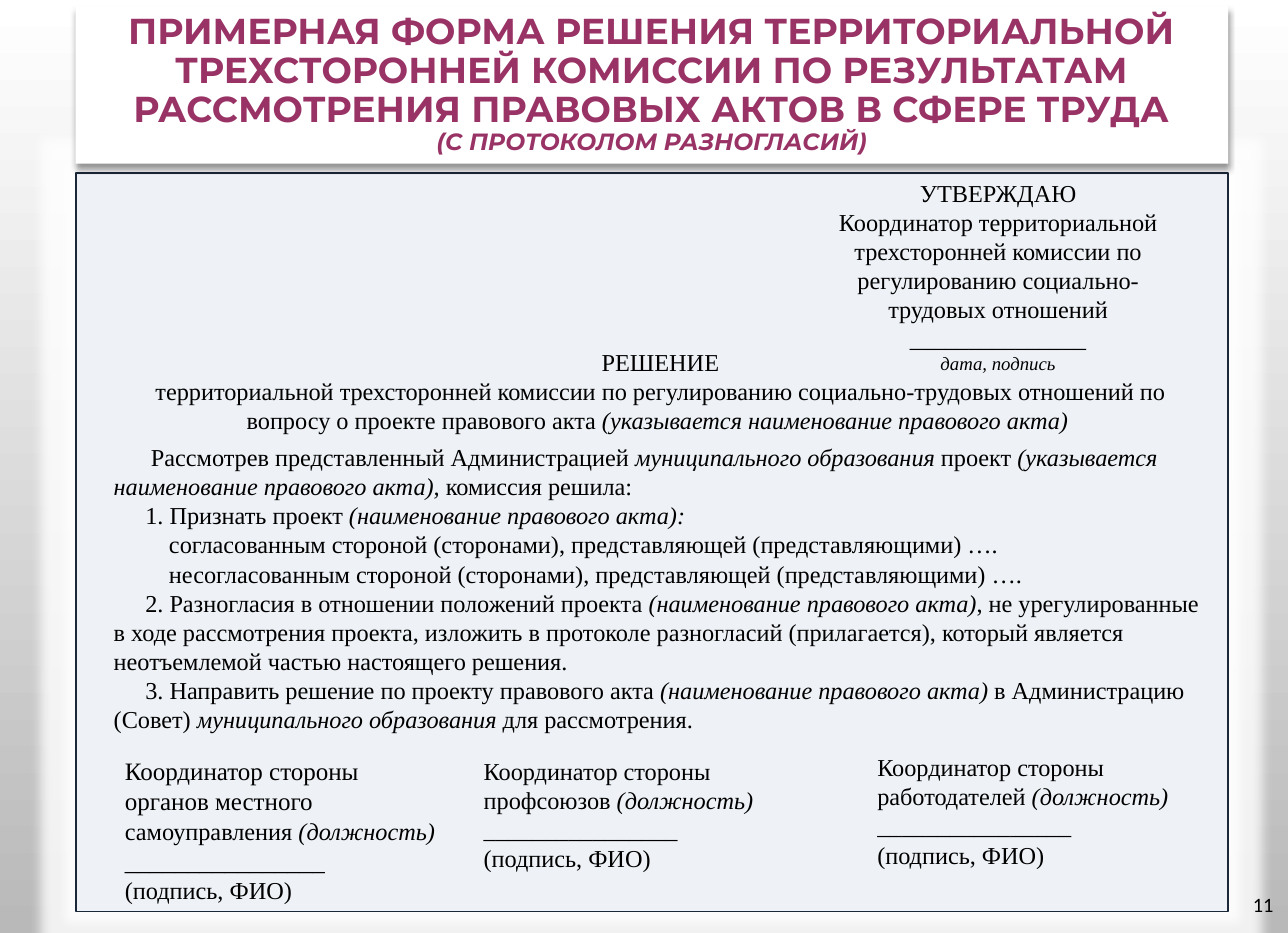
from dataclasses import dataclass

from lxml import etree
from pptx import Presentation
from pptx.dml.color import RGBColor
from pptx.enum.shapes import MSO_SHAPE
from pptx.enum.text import MSO_ANCHOR, MSO_AUTO_SIZE, PP_ALIGN
from pptx.oxml.ns import qn
from pptx.util import Inches, Pt

LEFT, CENTER, RIGHT = PP_ALIGN.LEFT, PP_ALIGN.CENTER, PP_ALIGN.RIGHT
TOP, MIDDLE = MSO_ANCHOR.TOP, MSO_ANCHOR.MIDDLE
RECTANGLE = MSO_SHAPE.RECTANGLE
NO_AUTOFIT = MSO_AUTO_SIZE.NONE

COLORS = {
    "white": "FFFFFF", "background_end": "B9B9B9", "panel": "EEF2F7",
    "panel_line": "1A2839", "heading": "993366", "text": "000000",
}
SERIF, HEADING_FONT, NUMBER_FONT = "Times New Roman", "Montserrat", "Calibri"
BODY_SIZE = 15.5
ITEM_INDENT, SUBITEM_INDENT = 0.28, 0.49


@dataclass
class Run:
    text: str
    italic: bool = False
    size: float = BODY_SIZE
    font: str = SERIF
    bold: bool = False
    color: str = "text"


@dataclass
class Paragraph:
    runs: list[Run]
    indent: float = 0


@dataclass
class Block:
    left: float
    top: float
    width: float
    height: float
    paragraphs: list[Paragraph]
    align: int = LEFT
    anchor: int = TOP
    insets: tuple[float, float] = (0.1, 0.05)


def rgb(name: str) -> RGBColor:
    return RGBColor.from_string(COLORS[name])


def line(text: str, italic: bool = False, size: float = BODY_SIZE) -> Paragraph:
    return Paragraph([Run(text, italic, size)])


def add_run(paragraph, part: Run) -> None:
    run = paragraph.add_run()
    run.text = part.text
    font = run.font
    font.name, font.size = part.font, Pt(part.size)
    font.bold, font.italic = part.bold, part.italic
    font.color.rgb = rgb(part.color)


def set_frame(frame, anchor: int, insets: tuple[float, float]) -> None:
    frame.word_wrap = True
    frame.auto_size = NO_AUTOFIT
    frame.vertical_anchor = anchor
    frame.margin_left = frame.margin_right = Inches(insets[0])
    frame.margin_top = frame.margin_bottom = Inches(insets[1])


def draw_block(slide, block: Block) -> None:
    box = slide.shapes.add_textbox(Inches(block.left), Inches(block.top),
                                   Inches(block.width), Inches(block.height))
    frame = box.text_frame
    set_frame(frame, block.anchor, block.insets)
    for index, content in enumerate(block.paragraphs):
        paragraph = frame.add_paragraph() if index else frame.paragraphs[0]
        paragraph.alignment = block.align
        if content.indent:
            paragraph._p.get_or_add_pPr().set("indent", str(Inches(content.indent)))
        for part in content.runs:
            add_run(paragraph, part)


def add_effect(shape, tag: str, color: str, alpha: int, **attributes: int) -> None:
    shape.shadow.inherit = False
    effects = shape._element.spPr.find(qn("a:effectLst"))
    effect = etree.SubElement(effects, qn(tag), {k: str(v) for k, v in attributes.items()})
    tint = etree.SubElement(effect, qn("a:srgbClr"), val=COLORS[color])
    etree.SubElement(tint, qn("a:alpha"), val=str(alpha * 1000))


def signature(left: float, top: float, width: float, height: float,
              party: list[Paragraph], rule_size: float = BODY_SIZE) -> Block:
    return Block(left, top, width, height,
                 [*party, line("________________", size=rule_size), line("(подпись, ФИО)")])


def coordinator(left: float, top: float, party: str) -> Block:
    return signature(left, top, 2.88, 1.18, [
        line("Координатор стороны"),
        Paragraph([Run(party), Run("(должность)", True)]),
    ])


APPROVAL = Block(7.13, 1.53, 3.44, 1.87, [
    line("УТВЕРЖДАЮ"),
    line("Координатор территориальной"),
    line("трехсторонней комиссии по регулированию социально-трудовых отношений"),
    line("_______________", size=15),
    line("дата, подпись", True, 12),
], CENTER)

DECISION = Block(1.25, 3.03, 9.21, 0.88, [
    line("РЕШЕНИЕ"),
    Paragraph([
        Run("территориальной трехсторонней комиссии по регулированию "
            "социально-трудовых отношений по вопросу о проекте правового акта "),
        Run("(указывается наименование правового акта) ", True),
    ]),
], CENTER)

RESOLUTION = Block(0.91, 3.87, 9.89, 2.79, [
    Paragraph([
        Run("Рассмотрев представленный Администрацией "),
        Run("муниципального образования ", True),
        Run("проект "),
        Run("(указывается наименование правового акта), ", True),
        Run("комиссия решила:"),
    ], 0.33),
    Paragraph([Run("1. Признать проект "),
               Run("(наименование правового акта):", True)], ITEM_INDENT),
    *(Paragraph([Run(f"{verdict} стороной (сторонами), представляющей "
                     "(представляющими) ….")], SUBITEM_INDENT)
      for verdict in ("согласованным", "несогласованным")),
    Paragraph([
        Run("2. Разногласия в отношении положений проекта "),
        Run("(наименование правового акта)", True),
        Run(", не урегулированные в ходе рассмотрения проекта, изложить в протоколе "
            "разногласий (прилагается), который является неотъемлемой частью "
            "настоящего решения."),
    ], ITEM_INDENT),
    Paragraph([
        Run("3. Направить решение по проекту правового акта "),
        Run("(наименование правового акта) ", True),
        Run("в Администрацию (Совет) "),
        Run("муниципального образования ", True),
        Run("для рассмотрения."),
    ], ITEM_INDENT),
])

SIGNATURES = [
    signature(1.01, 6.65, 3.04, 1.43, [Paragraph([
        Run("Координатор стороны органов местного ", size=16),
        Run("самоуправления "), Run("(должность)", True),
    ])], 16),
    coordinator(4.19, 6.65, "профсоюзов "),
    coordinator(7.68, 6.62, "работодателей "),
]

PAGE_NUMBER = Block(10.7, 7.8, 0.72, 0.44,
                    [Paragraph([Run("11", size=13, font=NUMBER_FONT)])],
                    RIGHT, MIDDLE, (0.13, 0.06))


def draw_background(slide) -> None:
    fill = slide.background.fill
    fill.gradient()
    fill.gradient_angle = 270
    for stop, color in zip(fill.gradient_stops, ("white", "background_end")):
        stop.color.rgb = rgb(color)


def draw_panel(slide) -> None:
    panel = slide.shapes.add_shape(RECTANGLE, Inches(0.67), Inches(1.53),
                                   Inches(10.22), Inches(6.55))
    panel.fill.solid()
    panel.fill.fore_color.rgb = rgb("panel")
    panel.line.color.rgb = rgb("panel_line")
    panel.line.width = Pt(1.25)
    add_effect(panel, "a:glow", "white", 80, rad=Inches(0.2))


def draw_title(slide) -> None:
    title = slide.shapes.title
    title.left, title.top = Inches(0.67), Inches(0.05)
    title.width, title.height = Inches(10.22), Inches(1.4)
    title.fill.solid()
    title.fill.fore_color.rgb = rgb("white")
    add_effect(title, "a:outerShdw", "text", 40, blurRad=Pt(4), dist=Pt(3), dir=5400000)
    set_frame(title.text_frame, MIDDLE, (0.13, 0.06))
    heading = title.text_frame.paragraphs[0]
    heading.alignment, heading.line_spacing = CENTER, 0.9
    add_run(heading, Run("ПРИМЕРНАЯ ФОРМА РЕШЕНИЯ ТЕРРИТОРИАЛЬНОЙ ТРЕХСТОРОННЕЙ КОМИССИИ "
                         "ПО РЕЗУЛЬТАТАМ РАССМОТРЕНИЯ ПРАВОВЫХ АКТОВ В СФЕРЕ ТРУДА",
                         False, 23, HEADING_FONT, True, "heading"))
    heading.add_line_break()
    add_run(heading, Run("(С ПРОТОКОЛОМ РАЗНОГЛАСИЙ)", True, 15, HEADING_FONT, True, "heading"))
    # Bring the title in front of the panel glow
    slide.shapes._spTree.append(title._element)


def main() -> None:
    deck = Presentation()
    deck.slide_width, deck.slide_height = Inches(11.42), Inches(8.27)
    slide = deck.slides.add_slide(deck.slide_layouts[5])
    draw_background(slide)
    draw_panel(slide)
    draw_title(slide)
    for block in (APPROVAL, DECISION, RESOLUTION, *SIGNATURES, PAGE_NUMBER):
        draw_block(slide, block)
    deck.save("out.pptx")


if __name__ == "__main__":
    main()
